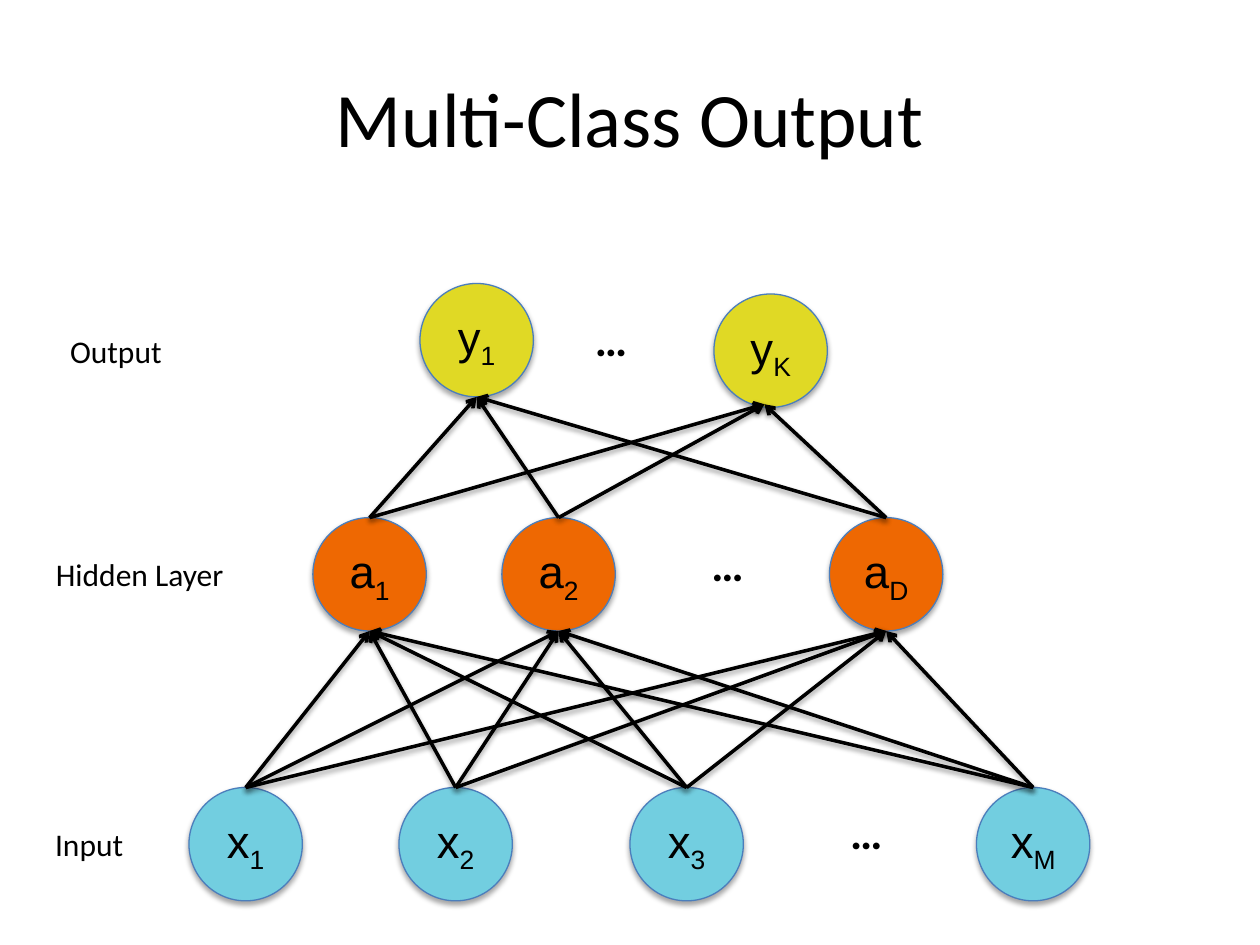
from dataclasses import dataclass
from itertools import product

from lxml import etree
from pptx import Presentation
from pptx.dml.color import RGBColor
from pptx.enum.shapes import MSO_CONNECTOR, MSO_SHAPE
from pptx.enum.text import MSO_ANCHOR, PP_ALIGN
from pptx.oxml import parse_xml
from pptx.oxml.ns import nsdecls, qn
from pptx.util import Inches, Pt

NODE = MSO_SHAPE.FLOWCHART_CONNECTOR
STRAIGHT = MSO_CONNECTOR.STRAIGHT
LEFT, CENTER = PP_ALIGN.LEFT, PP_ALIGN.CENTER
TOP, MIDDLE = MSO_ANCHOR.TOP, MSO_ANCHOR.MIDDLE
TITLE_ONLY = 5
WIDTH, HEIGHT = 10, 7.5
COLS = 120
UNIT = Inches(WIDTH) / COLS
DIAMETER = 10.8
DOTS_SIZE = (7, 6.4)
LABEL_HEIGHT = 4.8


@dataclass(frozen=True)
class Theme:
    ink: str = "000000"
    outline: str = "4B7EBC"
    output: str = "E0D925"
    hidden: str = "EE6802"
    input: str = "72CEE0"
    sans: str = "Calibri"
    symbol: str = "Arial"
    title_pt: int = 44
    node_pt: int = 26
    label_pt: int = 18
    node_line_pt: float = 0.75
    arrow_pt: int = 2


THEME = Theme()

LAYERS = [
    dict(name="Output", symbol="y", fill=THEME.output, dots=(54.7, 29),
         label=(5.5, 31, 17), align=LEFT,
         nodes=[("1", 40, 27, 0, 0), ("K", 68, 28, -0.6, -0.3)]),
    dict(name="Hidden Layer", symbol="a", fill=THEME.hidden, dots=(65.8, 50.4),
         label=(-0.2, 52.3, 27), align=CENTER,
         nodes=[("1", 29.8, 49.3, 0, 0), ("2", 47.8, 49.3, 0, 0),
                ("D", 79, 49.3, 0, 0)]),
    dict(name="Input", symbol="x", fill=THEME.input, dots=(79, 76),
         label=(0, 78, 17), align=CENTER,
         nodes=[("1", 18, 75, 0, 0), ("2", 38, 75, 0, 0),
                ("3", 60, 75, 0, 0), ("M", 93, 75, 0, 0)]),
]


def grid(*cells):
    return [round(c * UNIT) for c in cells]


def rgb(value):
    return RGBColor.from_string(value)


def add_shadow(sp, distance, alpha):
    sp._element.spPr.append(parse_xml(
        f'<a:effectLst {nsdecls("a")}><a:outerShdw blurRad="{Pt(3.1)}" '
        f'dist="{Pt(distance)}" dir="5400000" rotWithShape="0">'
        f'<a:srgbClr val="{THEME.ink}"><a:alpha val="{alpha}000"/></a:srgbClr>'
        '</a:outerShdw></a:effectLst>'))


def write(tf, text, size, font=THEME.sans, bold=False, align=CENTER,
          anchor=MIDDLE, subscript="", outlined=False):
    tf.word_wrap = True
    tf.vertical_anchor = anchor
    p = tf.paragraphs[0]
    p.alignment = align
    for part, baseline in ((text, 0), (subscript, -25)):
        if not part:
            continue
        r = p.add_run()
        r.text = part
        r.font.size, r.font.name, r.font.bold = Pt(size), font, bold
        r.font.color.rgb = rgb(THEME.ink)
        rpr = r.font._element
        if baseline:
            rpr.set("baseline", f"{baseline}000")
        if outlined:
            rpr.insert(0, parse_xml(
                f'<a:ln {nsdecls("a")} w="{Pt(THEME.node_line_pt)}"><a:solidFill>'
                f'<a:srgbClr val="{THEME.ink}"/></a:solidFill></a:ln>'))


def add_title(s, box, text):
    sp = s.shapes.title
    sp.left, sp.top, sp.width, sp.height = grid(*box)
    write(sp.text_frame, text, THEME.title_pt)


def add_text(s, box, text, size, **style):
    sp = s.shapes.add_textbox(*grid(*box))
    write(sp.text_frame, text, size, **style)


def add_node(s, box, symbol, subscript, fill):
    sp = s.shapes.add_shape(NODE, *grid(*box))
    sp.shadow.inherit = False
    sp._element.spPr.remove(sp._element.spPr.find(qn("a:effectLst")))
    sp.fill.solid()
    sp.fill.fore_color.rgb = rgb(fill)
    sp.line.color.rgb = rgb(THEME.outline)
    sp.line.width = Pt(THEME.node_line_pt)
    add_shadow(sp, 1.8, 35)
    write(sp.text_frame, symbol, THEME.node_pt, font=THEME.symbol,
          subscript=subscript, outlined=True)


def add_layer(s, layer):
    for subscript, x, y, _, _ in layer["nodes"]:
        add_node(s, (x, y, DIAMETER, DIAMETER), layer["symbol"], subscript,
                 layer["fill"])
    add_text(s, (*layer["dots"], *DOTS_SIZE), "…", THEME.node_pt, bold=True)
    add_text(s, (*layer["label"], LABEL_HEIGHT), layer["name"], THEME.label_pt,
             align=layer["align"], anchor=TOP)


def add_arrow(s, tip, origin):
    c = s.shapes.add_connector(STRAIGHT, *grid(*tip, *origin))
    c.line.color.rgb = rgb(THEME.ink)
    c.line.width = Pt(THEME.arrow_pt)
    etree.SubElement(c.line._get_or_add_ln(), qn("a:headEnd"), type="arrow")
    add_shadow(c, 1.6, 38)


def connect_layers(s, upper, lower):
    for target, source in product(upper["nodes"], lower["nodes"]):
        _, x, y, dx, dy = target
        _, source_x, source_y, _, _ = source
        add_arrow(s, (x + DIAMETER / 2 + dx, y + DIAMETER + dy),
                  (source_x + DIAMETER / 2, source_y))


def main():
    prs = Presentation()
    prs.slide_width, prs.slide_height = Inches(WIDTH), Inches(HEIGHT)
    s = prs.slides.add_slide(prs.slide_layouts[TITLE_ONLY])
    add_title(s, (6, 3.6, 108, 15), "Multi-Class Output")
    for layer in LAYERS:
        add_layer(s, layer)
    for upper, lower in zip(LAYERS, LAYERS[1:]):
        connect_layers(s, upper, lower)
    prs.save("out.pptx")


if __name__ == "__main__":
    main()
